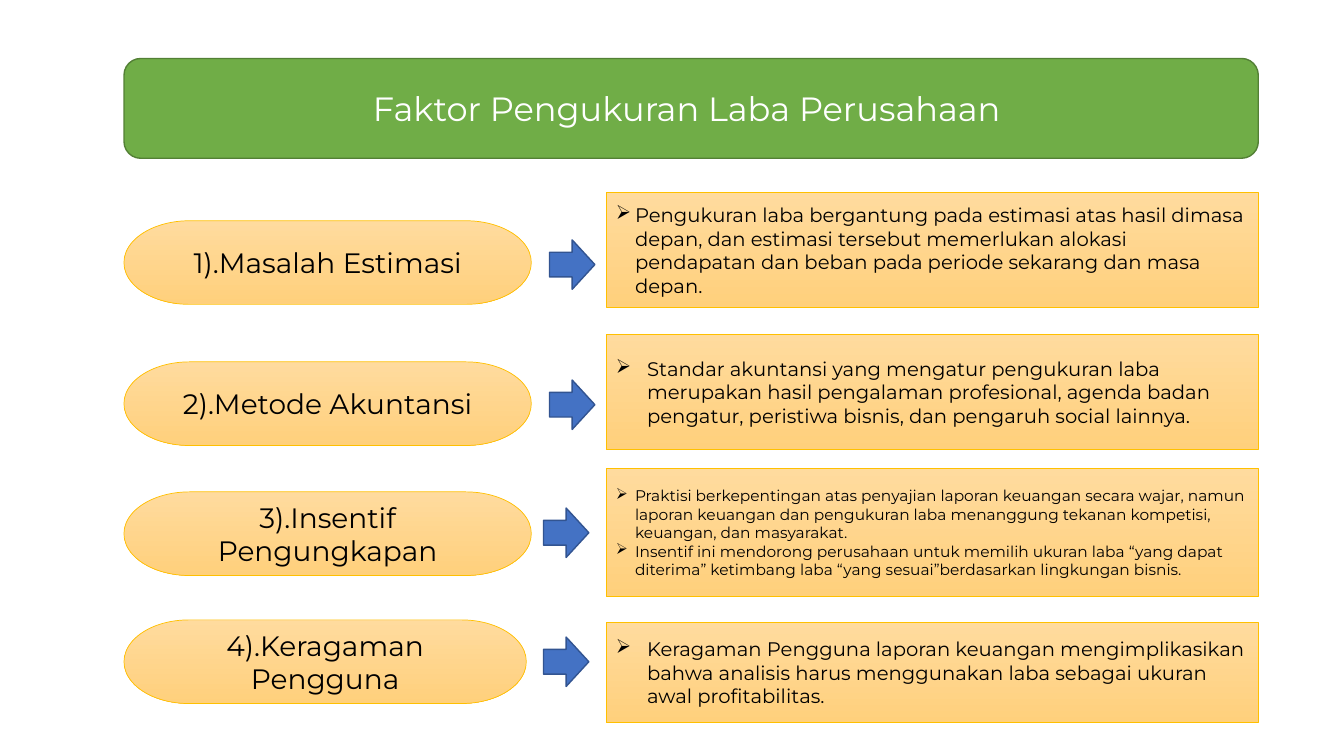
from lxml.etree import SubElement
from pptx import Presentation
from pptx.dml.color import RGBColor
from pptx.enum.shapes import MSO_SHAPE as Shape
from pptx.enum.text import MSO_ANCHOR as Anchor, PP_ALIGN as Align
from pptx.oxml.ns import qn
from pptx.util import Inches, Pt


def rgb(value):
    return RGBColor.from_string(value)


def write(shape, *paragraphs, size, color="000000", align=Align.LEFT, indent=0):
    """Fill a shape with paragraphs; an indent gives them arrow bullets."""
    frame = shape.text_frame
    frame.word_wrap = True
    frame.vertical_anchor = Anchor.MIDDLE
    for number, text in enumerate(paragraphs):
        paragraph = frame.add_paragraph() if number else frame.paragraphs[0]
        paragraph.alignment = align
        if indent:
            properties = paragraph._p.get_or_add_pPr()
            properties.set("marL", str(Inches(indent)))
            properties.set("indent", str(-Inches(indent)))
            SubElement(properties, qn("a:buChar")).set("char", "➢")
        run = paragraph.add_run()
        run.text = text
        run.font.name = Deck.font
        run.font.size = Pt(size)
        run.font.color.rgb = rgb(color)


class Deck:
    font = "Montserrat"
    left, right = 1.23, 12.48
    detail_left = 6.01

    def __init__(self, slide):
        self.slide = slide

    def shape(self, kind, left, top, width, height, line, weight, fill=None):
        shape = self.slide.shapes.add_shape(
            kind, Inches(left), Inches(top), Inches(width), Inches(height))
        shape.shadow.inherit = False
        shape.line.color.rgb = rgb(line)
        shape.line.width = Pt(weight)
        if fill:
            shape.fill.solid()
            shape.fill.fore_color.rgb = rgb(fill)
        else:
            shape.fill.gradient()
            shape.fill.gradient_angle = 270
            for stop, color in zip(shape.fill.gradient_stops, ("FFDB9E", "FFD07C")):
                stop.color.rgb = rgb(color)
        return shape

    def title(self, text):
        banner = self.shape(Shape.ROUNDED_RECTANGLE, self.left, 0.58,
                            self.right - self.left, 0.99, "538035", 1, "70AD47")
        write(banner, text, size=24, color="FFFFFF", align=Align.CENTER)

    def factor(self, text, top, width):
        pill = self.shape(Shape.FLOWCHART_TERMINATOR, self.left, top, width, 0.83,
                          "FFC000", 0.5)
        write(pill, text, size=20, align=Align.CENTER)

    def arrow(self, left, top):
        self.shape(Shape.RIGHT_ARROW, left, top, 0.45, 0.49, "325491", 1, "4472C4")

    def detail(self, paragraphs, top, height, size, indent):
        box = self.shape(Shape.RECTANGLE, self.detail_left, top,
                         self.right - self.detail_left, height, "FFC000", 0.5)
        write(box, *paragraphs, size=size, indent=indent)


# Each row: factor, its top and width; arrow left and top;
# detail paragraphs, their top, height, text size and indent
ROWS = [
    (("1).Masalah Estimasi", 2.19, 4.04), (5.45, 2.38),
     (["Pengukuran laba bergantung pada estimasi atas hasil dimasa depan, dan "
       "estimasi tersebut memerlukan alokasi pendapatan dan beban pada periode "
       "sekarang dan masa depan."], 1.91, 1.14, 14, 0.19)),
    (("2).Metode Akuntansi", 3.59, 4.04), (5.45, 3.77),
     (["Standar akuntansi yang mengatur pengukuran laba merupakan hasil "
       "pengalaman profesional, agenda badan pengatur, peristiwa bisnis, dan "
       "pengaruh social lainnya."], 3.32, 1.14, 14, 0.31)),
    (("3).Insentif Pengungkapan", 4.88, 4.04), (5.39, 5.04),
     (["Praktisi berkepentingan atas penyajian laporan keuangan secara wajar, "
       "namun laporan keuangan dan pengukuran laba menanggung tekanan kompetisi, "
       "keuangan, dan masyarakat.",
       "Insentif ini mendorong perusahaan untuk memilih ukuran laba “yang dapat "
       "diterima” ketimbang laba “yang sesuai”berdasarkan lingkungan bisnis."],
      4.65, 1.27, 11, 0.19)),
    (("4).Keragaman Pengguna", 6.15, 3.99), (5.39, 6.32),
     (["Keragaman Pengguna laporan keuangan mengimplikasikan bahwa analisis harus "
       "menggunakan laba sebagai ukuran awal profitabilitas."],
      6.17, 1, 14, 0.31)),
]


def main():
    presentation = Presentation()
    presentation.slide_width = Inches(13.33)
    presentation.slide_height = Inches(7.5)
    deck = Deck(presentation.slides.add_slide(presentation.slide_layouts[6]))

    # Title banner
    deck.title("Faktor Pengukuran Laba Perusahaan ")

    # Factors with their explanations
    for factor, arrow, detail in ROWS:
        deck.factor(*factor)
        deck.arrow(*arrow)
        deck.detail(*detail)

    presentation.save("out.pptx")


if __name__ == "__main__":
    main()
